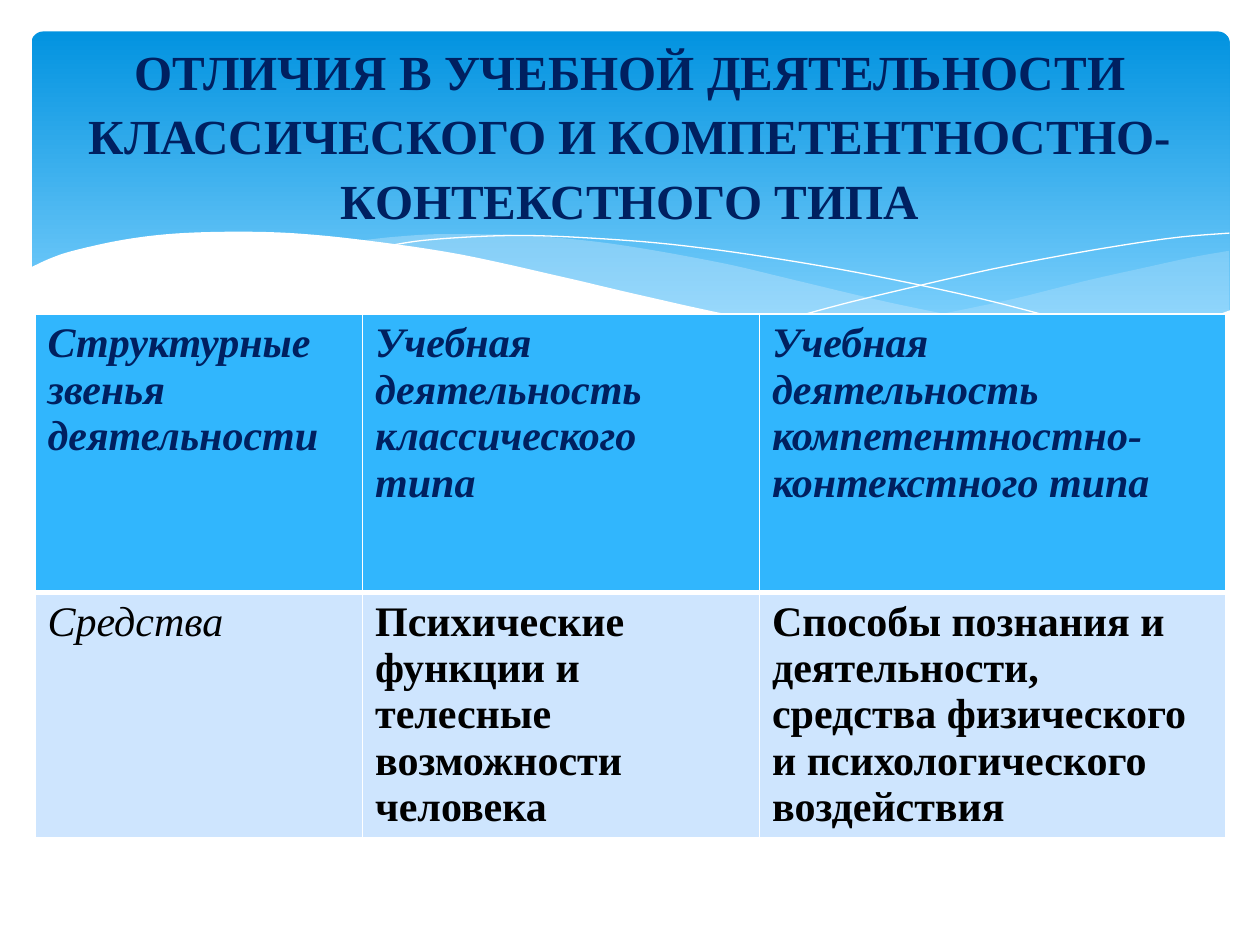
from pptx import Presentation
from pptx.dml.color import RGBColor
from pptx.enum.shapes import MSO_SHAPE
from pptx.enum.text import MSO_ANCHOR, PP_ALIGN
from pptx.oxml.ns import qn
from pptx.util import Pt
from lxml.etree import SubElement

NAVY = RGBColor(0x00, 0x20, 0x60)
BLACK = RGBColor(0x00, 0x00, 0x00)
WHITE = RGBColor(0xFF, 0xFF, 0xFF)
BANNER_TOP = RGBColor(0x02, 0x93, 0xE0)
BANNER_BOTTOM = RGBColor(0x83, 0xD3, 0xFE)
MIST = RGBColor(0xC6, 0xE7, 0xFC)
HEADER_BLUE = RGBColor(0x31, 0xB6, 0xFD)
ROW_BLUE = RGBColor(0xCE, 0xE5, 0xFE)
FONT = "Times New Roman"

TITLE = ("ОТЛИЧИЯ В УЧЕБНОЙ ДЕЯТЕЛЬНОСТИ КЛАССИЧЕСКОГО И "
         "КОМПЕТЕНТНОСТНО-КОНТЕКСТНОГО ТИПА")

# Each cell is a list of paragraphs
HEADER = [
    ["Структурные звенья деятельности"],
    ["Учебная", "деятельность классического типа"],
    ["Учебная", "деятельность компетентностно-контекстного типа"],
]
MEANS = [
    ["Средства"],
    ["Психические функции и телесные возможности человека"],
    ["Способы познания и деятельности, средства физического "
     "и психологического воздействия"],
]
COLUMN_WIDTHS = [187.2, 226.8, 266.4]
ROW_HEIGHTS = [159, 140]

# Waves, back to front: smooth edges joined in order, fill, opacity in percent
WAVES = [
    ([[(702.5, 143.3), (682, 146.9), (652, 153.4), (620, 160.6), (580, 170.6),
       (542, 178.6), (508, 185), (476, 190.8)],
      [(476, 190.8), (508, 195.1), (536, 198), (562, 199.4), (586, 200.2),
       (608, 199.4), (628, 197.3), (646, 194.4), (663, 190.8), (678, 186.5),
       (693, 181.4), (702.5, 177.8)]], MIST, 29),
    ([[(643, 196.6), (603, 190.8), (558, 182.9), (508, 172.8), (453, 159.8),
       (420, 151.9), (390, 146), (361, 141), (335, 137.5), (302, 134.6),
       (274, 133.9), (248, 133.9), (225, 135.4), (206, 137.5)],
      [(206, 137.5), (246, 143.3), (291, 151.9), (323, 159.8), (382, 172.8),
       (433, 183.6), (479, 191.5), (520, 197.3), (557, 199.6), (589, 200.2),
       (617, 199.4), (643, 196.6)]], MIST, 40),
    ([[(222.5, 140.4), (241, 137.5), (269, 135.4), (300, 134.6), (338, 136.1),
       (384, 139.7), (438, 146.9), (500, 157.7), (572, 173.5), (653, 195.8)]],
     None, 100),
    ([[(441.5, 185), (469, 177.1), (500, 169.2), (559, 155.5), (602, 146.9),
       (644, 139.7), (675, 135.4), (702.5, 133.2)]], None, 100),
    ([[(703.5, 177.1), (677, 186.5), (647, 193.7), (612, 198), (583, 199.4),
       (548, 198), (510, 194.4), (466, 188.6), (417, 180), (362, 167.8),
       (322, 158.4), (263, 145.4), (210, 137.5), (166, 133.2), (127, 132.5),
       (95, 133.9), (68, 137.5), (42, 143.3), (29, 147.6), (16.5, 153.4)],
      [(16.5, 237), (703.5, 237)]], WHITE, 100),
]


def smooth(points, steps=6):
    """Sample a Catmull-Rom curve through the points."""
    padded = [points[0], *points, points[-1]]
    curve = [points[0]]
    for p0, p1, p2, p3 in zip(padded, padded[1:], padded[2:], padded[3:]):
        for step in range(1, steps + 1):
            t = step / steps
            curve.append(tuple(
                (2 * b + (c - a) * t + (2 * a - 5 * b + 4 * c - d) * t ** 2
                 + (3 * b - a - 3 * c + d) * t ** 3) / 2
                for a, b, c, d in zip(p0, p1, p2, p3)))
    return curve


def add_wave(slide, edges, color, opacity):
    outline = [(Pt(x), Pt(y)) for edge in edges for x, y in smooth(edge)]
    builder = slide.shapes.build_freeform(*outline[0], scale=1.0)
    builder.add_line_segments(outline[1:], close=color is not None)
    wave = builder.convert_to_shape()
    wave.shadow.inherit = False
    if color is None:
        wave.fill.background()
        wave.line.color.rgb = WHITE
        wave.line.width = Pt(0)
        return
    wave.line.fill.background()
    wave.fill.solid()
    wave.fill.fore_color.rgb = color
    if opacity < 100:
        tone = wave.fill._xPr.find(qn("a:solidFill"))[0]
        SubElement(tone, qn("a:alpha"), val=str(opacity * 1000))


def add_text(paragraph, text, size, color, bold, italic=False):
    run = paragraph.add_run()
    run.text = text
    run.font.name = FONT
    run.font.size = Pt(size)
    run.font.color.rgb = color
    run.font.bold = bold
    run.font.italic = italic


def set_borders(cell, bottom):
    properties = cell._tc.get_or_add_tcPr()
    widths = {"a:lnL": 1, "a:lnR": 1, "a:lnT": 1, "a:lnB": bottom}
    for position, (side, width) in enumerate(widths.items()):
        border = SubElement(properties, qn(side), w=str(Pt(width)))
        SubElement(SubElement(border, qn("a:solidFill")),
                   qn("a:srgbClr"), val=str(WHITE))
        properties.insert(position, border)


def fill_cell(cell, paragraphs, fill, color, bold, italic, bottom):
    cell.fill.solid()
    cell.fill.fore_color.rgb = fill
    set_borders(cell, bottom)
    frame = cell.text_frame
    for index, text in enumerate(paragraphs):
        paragraph = frame.add_paragraph() if index else frame.paragraphs[0]
        add_text(paragraph, text, 24, color, bold, italic)


def main():
    deck = Presentation()
    deck.slide_width, deck.slide_height = Pt(720), Pt(540)
    slide = deck.slides.add_slide(deck.slide_layouts[6])

    # Banner with waves
    banner = slide.shapes.add_shape(MSO_SHAPE.ROUNDED_RECTANGLE,
                                    Pt(18), Pt(18), Pt(684.7), Pt(194.4))
    banner.adjustments[0] = 0.034
    banner.shadow.inherit = False
    banner.line.fill.background()
    banner.fill.gradient()
    banner.fill.gradient_angle = 270
    stops = banner.fill.gradient_stops
    for stop, color, position in zip(stops, (BANNER_TOP, BANNER_BOTTOM), (0, 0.9)):
        stop.color.rgb = color
        stop.position = position
    for edges, color, opacity in WAVES:
        add_wave(slide, edges, color, opacity)

    # Comparison table
    comparison = slide.shapes.add_table(
        2, 3, Pt(20), Pt(179.5), Pt(sum(COLUMN_WIDTHS)), Pt(sum(ROW_HEIGHTS))).table
    for column, width in zip(comparison.columns, COLUMN_WIDTHS):
        column.width = Pt(width)
    for row, height in zip(comparison.rows, ROW_HEIGHTS):
        row.height = Pt(height)
    for index, (heading, means) in enumerate(zip(HEADER, MEANS)):
        fill_cell(comparison.cell(0, index), heading, HEADER_BLUE, NAVY,
                  bold=True, italic=True, bottom=3)
        is_label = index == 0
        fill_cell(comparison.cell(1, index), means, ROW_BLUE, BLACK,
                  bold=not is_label, italic=is_label, bottom=1)

    # Title
    title = slide.shapes.add_textbox(Pt(36), Pt(26.6), Pt(648), Pt(98.6)).text_frame
    title.word_wrap = True
    title.vertical_anchor = MSO_ANCHOR.MIDDLE
    title.paragraphs[0].alignment = PP_ALIGN.CENTER
    title.paragraphs[0].line_spacing = 1.09
    add_text(title.paragraphs[0], TITLE, 28, NAVY, bold=True)

    deck.save("out.pptx")


if __name__ == "__main__":
    main()
